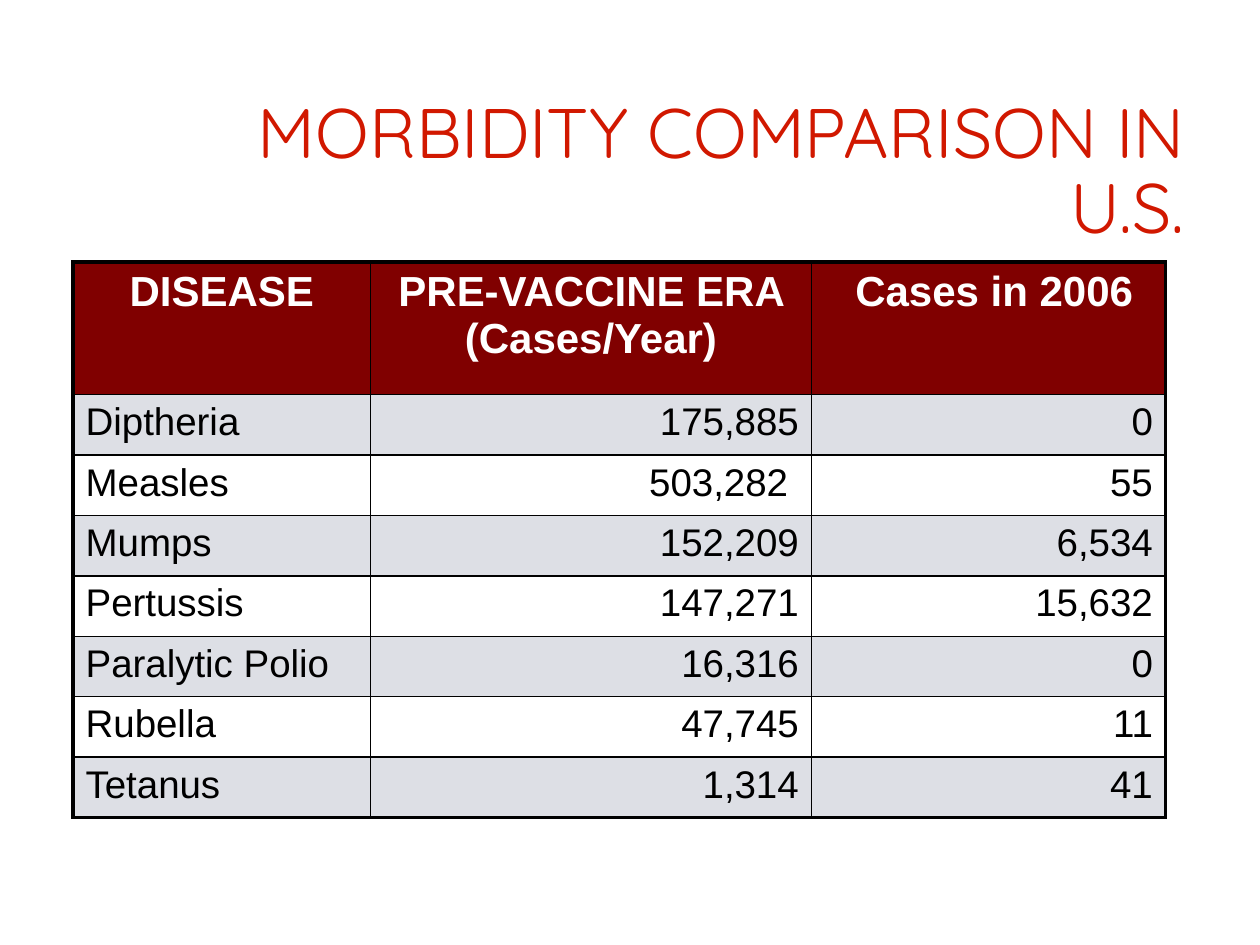
import pptx
import pptx.dml.color
import pptx.enum.text
import pptx.util
from lxml import etree
from pptx.oxml.ns import qn

Inches = pptx.util.Inches
Pt = pptx.util.Pt
RGBColor = pptx.dml.color.RGBColor
ALIGN = pptx.enum.text.PP_ALIGN
ANCHOR = pptx.enum.text.MSO_ANCHOR

# Content
TITLE = "MORBIDITY COMPARISON IN U.S."
ROWS = [
    ("DISEASE", "PRE-VACCINE ERA (Cases/Year)", " Cases in 2006"),
    ("Diptheria", "175,885", "0"),
    ("Measles", "503,282 ", "55"),
    ("Mumps", "152,209", "6,534"),
    ("Pertussis", "147,271", "15,632"),
    ("Paralytic Polio", "16,316", "0"),
    ("Rubella", "47,745", "11"),
    ("Tetanus", "1,314", "41"),
]

# Style
RED = RGBColor(0xD1, 0x18, 0x00)
MAROON = RGBColor(0x80, 0x00, 0x00)
GREY = RGBColor(0xDD, 0xDF, 0xE5)
WHITE = RGBColor(0xFF, 0xFF, 0xFF)
BLACK = RGBColor(0x00, 0x00, 0x00)
COLUMN_WIDTHS = (2.36, 3.5, 2.81)
HEADER_HEIGHT, ROW_HEIGHT = 1.05, 0.48
OUTER_LINE, INNER_LINE = 2.25, 1


def set_font(paragraph, name, size, color, bold=False):
    font = paragraph.font
    font.name, font.size, font.bold = name, Pt(size), bold
    font.color.rgb = color


def set_borders(cell, row, column):
    outer_sides = {
        "a:lnL": column == 0,
        "a:lnR": column == len(COLUMN_WIDTHS) - 1,
        "a:lnT": row == 0,
        "a:lnB": row == len(ROWS) - 1,
    }
    properties = cell._tc.get_or_add_tcPr()
    for side, is_outer in outer_sides.items():
        width = Pt(OUTER_LINE if is_outer else INNER_LINE)
        line = etree.SubElement(properties, qn(side), w=str(int(width)))
        fill = etree.SubElement(line, qn("a:solidFill"))
        etree.SubElement(fill, qn("a:srgbClr"), val=str(BLACK))


def style_cell(cell, row, column):
    set_borders(cell, row, column)
    is_header = row == 0
    if is_header or row % 2:
        cell.fill.solid()
        cell.fill.fore_color.rgb = MAROON if is_header else GREY
    else:
        cell.fill.background()
    paragraph = cell.text_frame.paragraphs[0]
    if is_header:
        paragraph.alignment = ALIGN.CENTER
        set_font(paragraph, "Arial", 24, WHITE, bold=True)
    else:
        paragraph.alignment = ALIGN.RIGHT if column else ALIGN.LEFT
        set_font(paragraph, "Arial", 22, BLACK)


presentation = pptx.Presentation()
presentation.slide_width, presentation.slide_height = Inches(10), Inches(7.5)
slide = presentation.slides.add_slide(presentation.slide_layouts[6])

# Title
title = slide.shapes.add_textbox(Inches(0.92), Inches(0.5), Inches(8.58), Inches(1.75))
frame = title.text_frame
frame.word_wrap = True
frame.vertical_anchor = ANCHOR.MIDDLE
paragraph = frame.paragraphs[0]
paragraph.text = TITLE
paragraph.alignment = ALIGN.RIGHT
paragraph.line_spacing = 0.9
set_font(paragraph, "Quicksand", 40, RED)

# Table
row_heights = [HEADER_HEIGHT] + [ROW_HEIGHT] * (len(ROWS) - 1)
table = slide.shapes.add_table(
    len(ROWS), len(COLUMN_WIDTHS), Inches(0.58), Inches(2.08),
    Inches(sum(COLUMN_WIDTHS)), Inches(sum(row_heights))).table
for column, width in zip(table.columns, COLUMN_WIDTHS):
    column.width = Inches(width)
for row, height in zip(table.rows, row_heights):
    row.height = Inches(height)
for row_index, texts in enumerate(ROWS):
    for column_index, text in enumerate(texts):
        cell = table.cell(row_index, column_index)
        cell.text = text
        style_cell(cell, row_index, column_index)

presentation.save("out.pptx")
